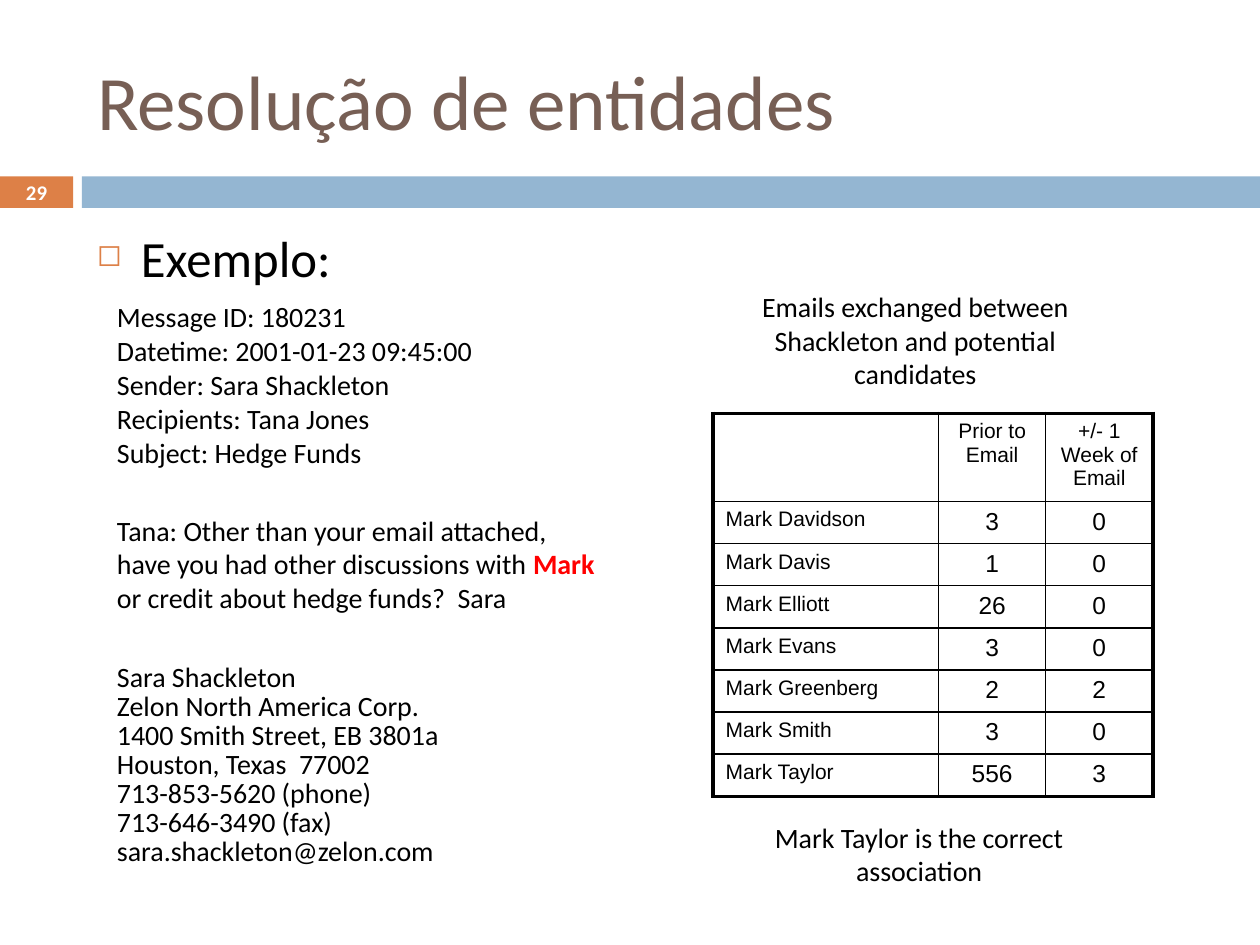
import pptx
import pptx.util
import pptx.dml.color
import pptx.enum.shapes
import pptx.enum.text
import pptx.oxml
import pptx.oxml.ns
from lxml import etree

Inches = pptx.util.Inches
Pt = pptx.util.Pt
RGBColor = pptx.dml.color.RGBColor
Align = pptx.enum.text.PP_ALIGN
Anchor = pptx.enum.text.MSO_ANCHOR
qn = pptx.oxml.ns.qn

BLACK = RGBColor(0x00, 0x00, 0x00)
WHITE = RGBColor(0xFF, 0xFF, 0xFF)
RED = RGBColor(0xFF, 0x00, 0x00)
BROWN = RGBColor(0x77, 0x5F, 0x55)
ORANGE = RGBColor(0xDD, 0x80, 0x47)
BLUE = RGBColor(0x94, 0xB6, 0xD2)

TITLE = "Resolução de entidades"
HEADS = [
    "Message ID: 180231",
    "Datetime: 2001-01-23 09:45:00",
    "Sender: Sara Shackleton",
    "Recipients: Tana Jones",
    "Subject: Hedge Funds",
]
QUERY = [
    ("Tana: Other than your email attached, have you had other discussions with ", BLACK),
    ("Mark", RED),
    (" or credit about hedge funds?  Sara", BLACK),
]
SIGN = [
    "Sara Shackleton",
    "Zelon North America Corp.",
    "1400 Smith Street, EB 3801a",
    "Houston, Texas  77002",
    "713-853-5620 (phone)",
    "713-646-3490 (fax)",
    "sara.shackleton@zelon.com",
]
NOTES = [
    ("Emails exchanged between Shackleton and potential candidates", (5.63, 2.25, 3.27, 0.9)),
    ("Mark Taylor is the correct association", (5.66, 6.46, 3.27, 0.64)),
]
COUNTS = [
    ("", "Prior to Email", "+/- 1 Week of Email"),
    ("Mark Davidson", "3", "0"),
    ("Mark Davis", "1", "0"),
    ("Mark Elliott", "26", "0"),
    ("Mark Evans", "3", "0"),
    ("Mark Greenberg", "2", "2"),
    ("Mark Smith", "3", "0"),
    ("Mark Taylor", "556", "3"),
]
COLS = (1.79, 0.85, 0.85)
TABLE = (5.66, 3.28, 3.49, 3.03)
HEAD = 0.69
BARS = [((0, 1.4, 0.58, 0.25), ORANGE), ((0.65, 1.4, 9.35, 0.25), BLUE)]


def place(box):
    return [Inches(n) for n in box]


def add_run(para, text, size, color=BLACK, bold=False, face="Calibri"):
    run = para.add_run()
    run.text = text
    run.font.name = face
    run.font.size = Pt(size)
    run.font.bold = bold
    run.font.color.rgb = color


def add_box(slide, box, anchor=Anchor.TOP):
    frame = slide.shapes.add_textbox(*place(box)).text_frame
    frame.word_wrap = True
    frame.vertical_anchor = anchor
    return frame


def add_bar(slide, box, color):
    bar = slide.shapes.add_shape(pptx.enum.shapes.MSO_SHAPE.RECTANGLE, *place(box))
    bar.shadow.inherit = False
    bar.fill.solid()
    bar.fill.fore_color.rgb = color
    bar.line.fill.background()


def add_bullet(para, mark, color, size):
    props = para._p.get_or_add_pPr()
    props.set("marL", str(Inches(0.35)))
    props.set("indent", str(-Inches(0.35)))
    tint = etree.SubElement(props, qn("a:buClr"))
    etree.SubElement(tint, qn("a:srgbClr"), val=str(color))
    etree.SubElement(props, qn("a:buSzPct"), val=str(size * 1000))
    etree.SubElement(props, qn("a:buChar"), char=mark)


def add_mail(slide):
    paras = [([(text, BLACK)], 0.65, 7) for text in HEADS]
    paras.append((QUERY, 1.0, 26))
    paras += [([(text, BLACK)], 0.5, 7 if i else 34) for i, text in enumerate(SIGN)]
    frame = add_box(slide, (0.83, 2.41, 4.02, 4.7))
    for i, (runs, lead, gap) in enumerate(paras):
        para = frame.add_paragraph() if i else frame.paragraphs[0]
        para.line_spacing = lead
        para.space_before = Pt(gap)
        for text, color in runs:
            add_run(para, text, 16, color, color == RED)


def set_edges(cell, outer):
    props = cell._tc.get_or_add_tcPr()
    for i, side in enumerate("LRTB"):
        width = Pt(2.25 if outer[side] else 1)
        line = etree.Element(qn("a:ln" + side), w=str(width))
        fill = etree.SubElement(line, qn("a:solidFill"))
        etree.SubElement(fill, qn("a:srgbClr"), val=str(BLACK))
        props.insert(i, line)


def add_counts(slide):
    rows, cols = len(COUNTS), len(COLS)
    table = slide.shapes.add_table(rows, cols, *place(TABLE)).table
    for col, width in zip(table.columns, COLS):
        col.width = Inches(width)
    for r, row in enumerate(COUNTS):
        table.rows[r].height = Inches((TABLE[3] - HEAD) / (rows - 1) if r else HEAD)
        for c, text in enumerate(row):
            cell = table.cell(r, c)
            cell.fill.background()
            set_edges(cell, {"L": c == 0, "R": c == cols - 1, "T": r == 0, "B": r == rows - 1})
            para = cell.text_frame.paragraphs[0]
            para.alignment = Align.CENTER if c else Align.LEFT
            if text:
                add_run(para, text, 14 if r and c else 12, face="Arial")


def main():
    deck = pptx.Presentation()
    deck.slide_width, deck.slide_height = Inches(10), Inches(7.5)
    slide = deck.slides.add_slide(deck.slide_layouts[5])

    for box, color in BARS:
        add_bar(slide, box, color)

    title = slide.shapes.title
    title.left, title.top, title.width, title.height = place((0.67, 0.25, 8.92, 1.08))
    title.text_frame.vertical_anchor = Anchor.MIDDLE
    para = title.text_frame.paragraphs[0]
    para.alignment = Align.LEFT
    add_run(para, TITLE, 44, BROWN)

    para = add_box(slide, (0.67, 1.75, 8.92, 0.65)).paragraphs[0]
    para.space_before = Pt(7)
    add_bullet(para, "◻", ORANGE, 60)
    add_run(para, "Exemplo:", 29)

    add_mail(slide)
    add_counts(slide)
    for text, box in NOTES:
        para = add_box(slide, box).paragraphs[0]
        para.alignment = Align.CENTER
        add_run(para, text, 16)

    para = add_box(slide, (0, 1.39, 0.58, 0.27), Anchor.MIDDLE).paragraphs[0]
    para.alignment = Align.CENTER
    add_run(para, "29", 11.9, WHITE, True)

    deck.save("out.pptx")


if __name__ == "__main__":
    main()
